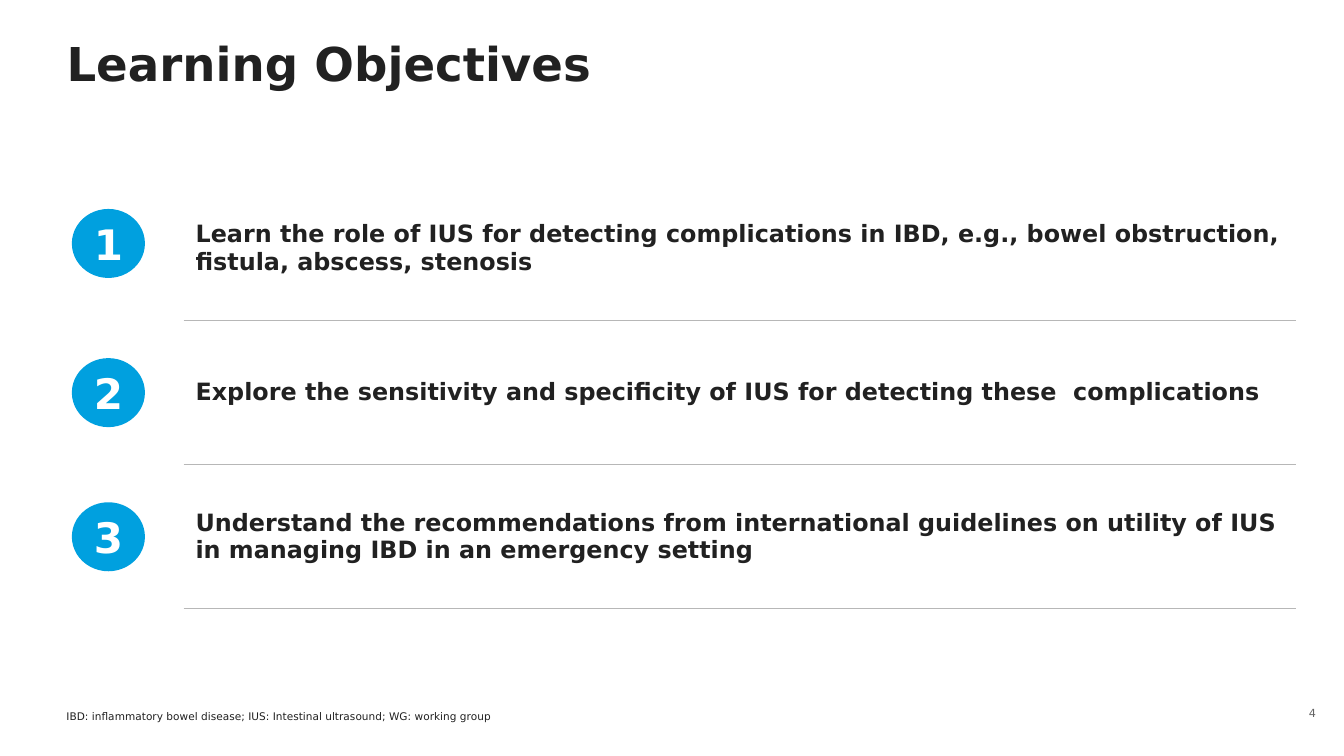
from lxml import etree
from pptx import Presentation
from pptx import util as u
from pptx.dml.color import RGBColor
from pptx.enum import shapes, text
from pptx.oxml.ns import qn

FONT = "DejaVu Sans"
COLOURS = {"ink": "212121", "blue": "00A0DF", "rule": "B7B7B7",
           "grey": "646464", "white": "FFFFFF"}
OBJECTIVES = [
    "Learn the role of IUS for detecting complications in IBD, e.g., bowel obstruction, "
    "fistula, abscess, stenosis",
    "Explore the sensitivity and specificity of IUS for detecting these  complications",
    "Understand the recommendations from international guidelines on utility of IUS "
    "in managing IBD in an emergency setting",
]
BADGE_TOPS = [2.09, 3.57, 5.0]


def colour(name):
    return RGBColor.from_string(COLOURS[name])


def write(frame, words, size, ink="ink", bold=False, align=text.PP_ALIGN.LEFT,
          anchor=text.MSO_ANCHOR.TOP, insets=(0, 0, 0, 0), spacing=None):
    frame.word_wrap = True
    frame.auto_size = text.MSO_AUTO_SIZE.NONE
    frame.vertical_anchor = anchor
    (frame.margin_left, frame.margin_top,
     frame.margin_right, frame.margin_bottom) = map(u.Inches, insets)
    para = frame.paragraphs[0]
    para.alignment = align
    para.space_before = u.Pt(0)
    if spacing:
        para.line_spacing = spacing
    span = para.add_run()
    span.text = words
    span.font.name = FONT
    span.font.size = u.Pt(size)
    span.font.bold = bold
    span.font.color.rgb = colour(ink)


def add_title(page, left, top, width, height):
    title = page.shapes.title
    title.left, title.top, title.width, title.height = map(
        u.Inches, (left, top, width, height))
    write(title.text_frame, "Learning Objectives", 33.3, bold=True, spacing=0.9)


def add_note(page, left, top, width, height, words, size, **style):
    box = page.shapes.add_textbox(*map(u.Inches, (left, top, width, height)))
    write(box.text_frame, words, size, **style)


def set_borders(cell, ruled):
    """Draw a grey rule on the named sides of a cell and clear the others."""
    properties = cell._tc.get_or_add_tcPr()
    for place, side in enumerate(("lnL", "lnR", "lnT", "lnB")):
        border = etree.Element(qn(f"a:{side}"), w=str(u.Pt(1)))
        if side in ruled:
            fill = etree.SubElement(border, qn("a:solidFill"))
            etree.SubElement(fill, qn("a:srgbClr"), val=COLOURS["rule"])
        else:
            etree.SubElement(border, qn("a:noFill"))
        properties.insert(place, border)


def add_objectives(page, left, top, width, height):
    count = len(OBJECTIVES)
    table = page.shapes.add_table(
        count, 1, *map(u.Inches, (left, top, width, height))).table
    table.first_row = table.horz_banding = False
    for index, objective in enumerate(OBJECTIVES):
        cell = table.cell(index, 0)
        cell.fill.background()
        set_borders(cell, ("lnT", "lnB") if index else ("lnB",))
        cell.vertical_anchor = text.MSO_ANCHOR.MIDDLE
        (cell.margin_left, cell.margin_top,
         cell.margin_right, cell.margin_bottom) = map(u.Inches, (0.12, 0.04, 0.06, 0.04))
        para = cell.text_frame.paragraphs[0]
        span = para.add_run()
        span.text = objective
        span.font.name = FONT
        span.font.size = u.Pt(17)
        span.font.bold = True
        span.font.color.rgb = colour("ink")


def add_badge(page, left, top, width, height, number):
    badge = page.shapes.add_shape(
        shapes.MSO_SHAPE.OVAL, *map(u.Inches, (left, top, width, height)))
    badge.shadow.inherit = False
    badge.fill.solid()
    badge.fill.fore_color.rgb = colour("blue")
    badge.line.color.rgb = colour("blue")
    badge.line.width = u.Pt(2.5)
    write(badge.text_frame, str(number), 30, ink="white", bold=True,
          align=text.PP_ALIGN.CENTER, anchor=text.MSO_ANCHOR.MIDDLE)


def main():
    deck = Presentation()
    deck.slide_width, deck.slide_height = u.Inches(13.33), u.Inches(7.5)
    page = deck.slides.add_slide(deck.slide_layouts.get_by_name("Title Only"))
    add_title(page, 0.66, 0.41, 11.1, 0.5)
    add_objectives(page, 1.82, 1.75, 11.03, 4.29)
    for number, top in enumerate(BADGE_TOPS, start=1):
        add_badge(page, 0.73, top, 0.69, 0.65, number)
    add_note(page, 12.73, 6.89, 0.42, 0.36, "4", 8, ink="grey",
             align=text.PP_ALIGN.RIGHT, anchor=text.MSO_ANCHOR.MIDDLE,
             insets=(0.1, 0.05, 0.1, 0.05))
    add_note(page, 0.66, 6.87, 9.17, 0.3,
             "IBD: inflammatory bowel disease; IUS: Intestinal ultrasound; WG: working group",
             7.5, anchor=text.MSO_ANCHOR.BOTTOM)
    deck.save("out.pptx")


if __name__ == "__main__":
    main()
